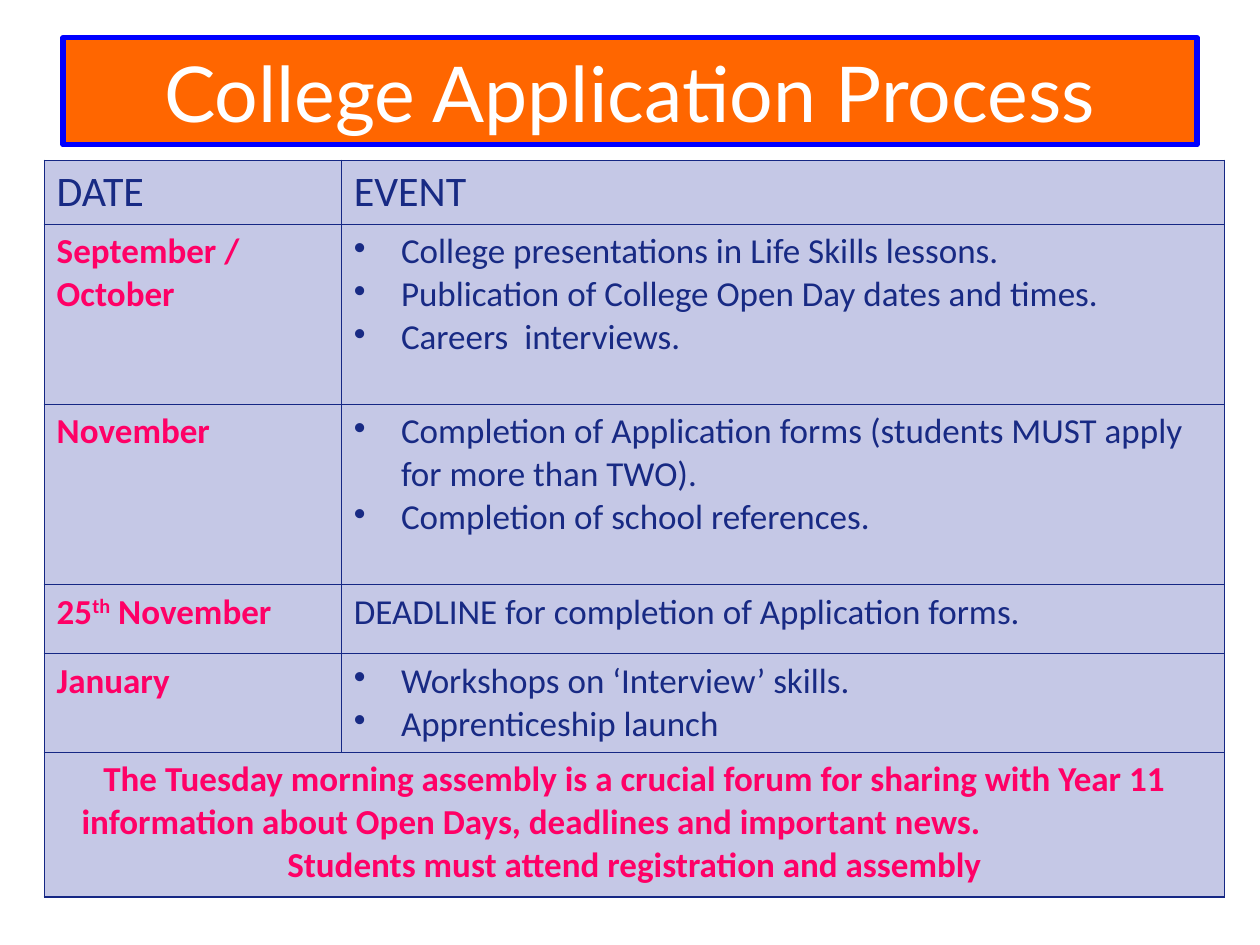
"""Build the College Application Process slide."""
from lxml.etree import SubElement
from pptx import Presentation
from pptx.dml.color import RGBColor
from pptx.enum.text import MSO_ANCHOR as Anchor, PP_ALIGN as Align
from pptx.oxml.ns import qn
from pptx.util import Cm, Pt

WHITE = RGBColor(0xFF, 0xFF, 0xFF)
ORANGE = RGBColor(0xFF, 0x66, 0x00)
BLUE = RGBColor(0x00, 0x00, 0xFF)
NAVY = RGBColor(0x18, 0x2A, 0x84)
BORDER = RGBColor(0x15, 0x27, 0x84)
PINK = RGBColor(0xFF, 0x00, 0x66)
LAVENDER = RGBColor(0xC5, 0xC8, 0xE6)

COLUMNS = (5.99, 17.81)
ROWS = (1.29, 3.63, 3.63, 1.4, 1.97, 2.92)
SCHEDULE = [
    (["September / October"], [
        "College presentations in Life Skills lessons.",
        "Publication of College Open Day dates and times.",
        "Careers  interviews.",
    ]),
    (["November"], [
        "Completion of Application forms (students MUST apply for more than TWO).",
        "Completion of school references.",
    ]),
    (["25", "th", " November"], ["DEADLINE for completion of Application forms."]),
    (["January"], ["Workshops on ‘Interview’ skills.", "Apprenticeship launch"]),
]
NOTICE = [
    ("The Tuesday morning assembly is a crucial forum for sharing with Year 11", Align.CENTER, 0),
    ("information about Open Days, deadlines and important news.", Align.LEFT, 0.5),
    ("Students must attend registration and assembly", Align.CENTER, 0),
]


class SlideBuilder:
    def __init__(self, slide):
        self.slide = slide
        self.title_font, self.body_font = "Lato", "Calibri"

    def add_runs(self, paragraph, runs, size, color, bold=False, font=None):
        for text in runs:
            run = paragraph.add_run()
            run.text = text
            run.font.name = font or self.body_font
            run.font.size = Pt(size)
            run.font.bold = bold
            run.font.color.rgb = color
            if text == "th":
                run._r.get_or_add_rPr().set("baseline", "30000")

    def indent(self, paragraph, left, hanging=0, bullet=None):
        properties = paragraph._p.get_or_add_pPr()
        properties.set("marL", str(int(Cm(left))))
        properties.set("indent", str(-int(Cm(hanging))))
        if bullet:
            SubElement(properties, qn("a:buChar"), char=bullet)

    def title(self, text, left, top, width, height):
        shape = self.slide.shapes.title
        shape.left, shape.top, shape.width, shape.height = map(Cm, (left, top, width, height))
        shape.fill.solid()
        shape.fill.fore_color.rgb = ORANGE
        shape.line.color.rgb = BLUE
        shape.line.width = Pt(3)
        shape.text_frame.vertical_anchor = Anchor.MIDDLE
        paragraph = shape.text_frame.paragraphs[0]
        paragraph.alignment = Align.CENTER
        self.add_runs(paragraph, [text], 44, WHITE, font=self.title_font)

    def style_cell(self, cell):
        properties = cell._tc.get_or_add_tcPr()
        for side in ("lnL", "lnR", "lnT", "lnB"):
            line = SubElement(properties, qn(f"a:{side}"), w=str(int(Pt(0.75))))
            fill = SubElement(line, qn("a:solidFill"))
            SubElement(fill, qn("a:srgbClr"), val=str(BORDER))
        cell.fill.solid()
        cell.fill.fore_color.rgb = LAVENDER

    def table(self, left, top, columns, rows):
        frame = self.slide.shapes.add_table(
            len(rows), len(columns), Cm(left), Cm(top), Cm(sum(columns)), Cm(sum(rows)))
        table = frame.table
        table.first_row = table.horz_banding = False
        for column, width in zip(table.columns, columns):
            column.width = Cm(width)
        for row, height in zip(table.rows, rows):
            row.height = Cm(height)
        for cell in table.iter_cells():
            self.style_cell(cell)
        return table

    def paragraphs(self, cell, count):
        frame = cell.text_frame
        for _ in range(count - 1):
            frame.add_paragraph()
        return frame.paragraphs

    def events(self, cell, events):
        for paragraph, event in zip(self.paragraphs(cell, len(events)), events):
            if len(events) > 1:
                self.indent(paragraph, 0.95, 0.95, "•")
            self.add_runs(paragraph, [event], 20, NAVY)

    def notice(self, cell, lines):
        for paragraph, (text, alignment, left) in zip(self.paragraphs(cell, len(lines)), lines):
            self.indent(paragraph, left)
            paragraph.alignment = alignment
            self.add_runs(paragraph, [text], 20, PINK, bold=True)


def main():
    presentation = Presentation()
    presentation.slide_width, presentation.slide_height = Cm(25.4), Cm(19.05)
    builder = SlideBuilder(presentation.slides.add_slide(presentation.slide_layouts[5]))
    builder.title("College Application Process", 1.27, 0.76, 22.86, 2.16)

    table = builder.table(0.89, 3.23, COLUMNS, ROWS)
    for column, heading in enumerate(("DATE", "EVENT")):
        builder.add_runs(table.cell(0, column).text_frame.paragraphs[0], [heading], 24, NAVY)
    for row, (date, events) in enumerate(SCHEDULE, start=1):
        builder.add_runs(table.cell(row, 0).text_frame.paragraphs[0], date, 20, PINK, bold=True)
        builder.events(table.cell(row, 1), events)
    last = len(ROWS) - 1
    table.cell(last, 0).merge(table.cell(last, 1))
    builder.notice(table.cell(last, 0), NOTICE)
    presentation.save("out.pptx")


if __name__ == "__main__":
    main()
